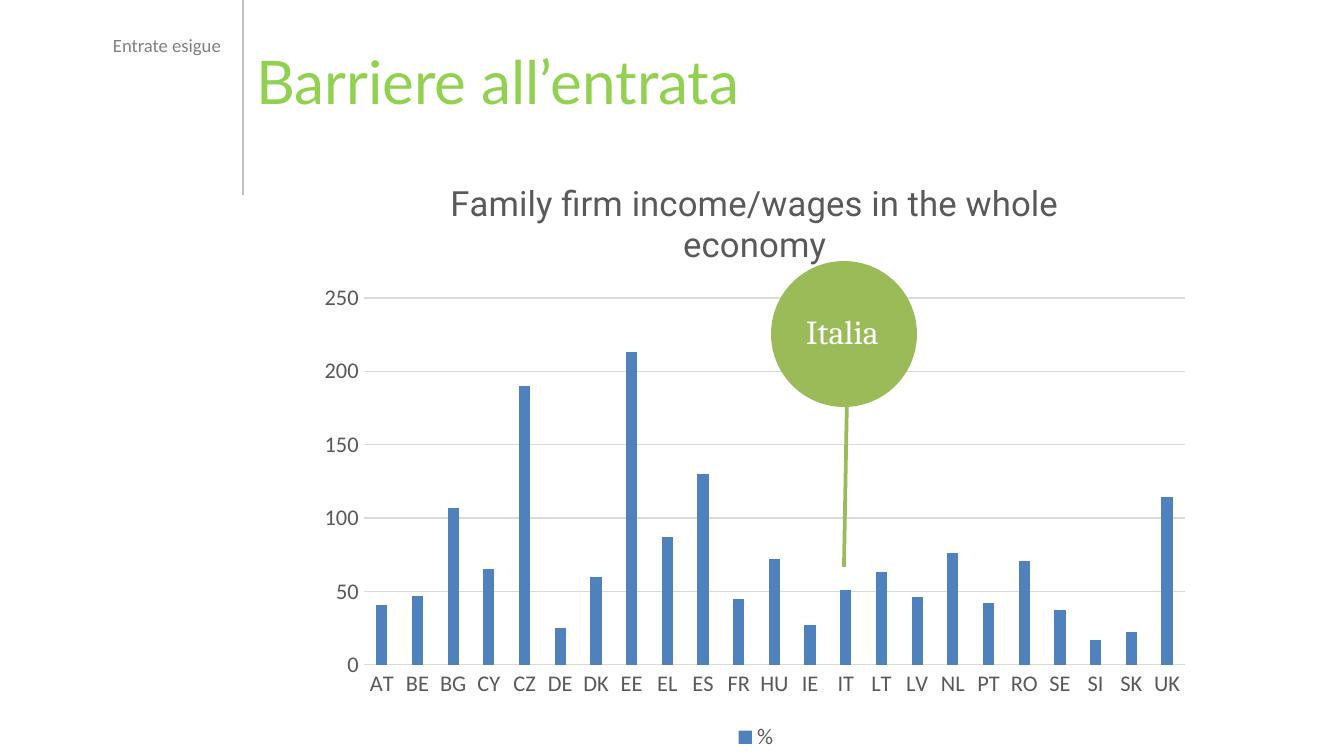
from lxml import etree
from pptx import Presentation
from pptx.chart.data import CategoryChartData
from pptx.dml.color import RGBColor
from pptx.enum.chart import XL_CHART_TYPE, XL_LEGEND_POSITION, XL_TICK_MARK
from pptx.enum.shapes import MSO_CONNECTOR, MSO_SHAPE
from pptx.enum.text import PP_ALIGN
from pptx.oxml import parse_xml
from pptx.oxml.ns import nsdecls, qn
from pptx.util import Pt

PX = 914400 / 134.4
COLUMN = XL_CHART_TYPE.COLUMN_CLUSTERED
BOTTOM = XL_LEGEND_POSITION.BOTTOM
NO_TICK = XL_TICK_MARK.NONE
STRAIGHT = MSO_CONNECTOR.STRAIGHT
OVAL = MSO_SHAPE.OVAL
LEFT, RIGHT = PP_ALIGN.LEFT, PP_ALIGN.RIGHT

COLORS = {
    "title": "92D050", "kicker": "808080", "rule": "BFBFBF",
    "text": "595959", "grid": "D9D9D9", "bar": "4F81BD",
    "callout": "9BBB59", "white": "FFFFFF",
}
INCOME = {
    "AT": 41, "BE": 47, "BG": 107, "CY": 65, "CZ": 190, "DE": 25,
    "DK": 60, "EE": 213, "EL": 87, "ES": 130, "FR": 45, "HU": 72,
    "IE": 27, "IT": 51, "LT": 63, "LV": 46, "NL": 76, "PT": 42,
    "RO": 71, "SE": 37, "SI": 17, "SK": 22, "UK": 114,
}


def px(*values):
    """Turn px lengths into EMU."""
    return [round(v * PX) for v in values]


def rgb(name):
    """Look up a named colour."""
    return RGBColor.from_string(COLORS[name])


def style_font(font, size, name, color):
    """Set size, typeface and colour of a font."""
    font.size, font.name, font.bold = Pt(size), name, False
    font.color.rgb = rgb(color)


def add_text(s, box, text, size, name, color, align=LEFT, wrap=True):
    """Add a one-paragraph text box."""
    tf = s.shapes.add_textbox(*px(*box)).text_frame
    tf.word_wrap = wrap
    p = tf.paragraphs[0]
    p.text, p.alignment = text, align
    style_font(p.runs[0].font, size, name, color)


def add_line(s, ends, color, width):
    """Add a straight line without a shadow."""
    c = s.shapes.add_connector(STRAIGHT, *px(*ends))
    c.line.color.rgb, c.line.width = rgb(color), Pt(width)
    etree.SubElement(c._element.spPr, qn("a:effectLst"))


def set_layout(parent, box, size, inner=False):
    """Place a chart part by a px box inside a chart of the given px size."""
    target = '<c:layoutTarget val="inner"/>' if inner else ""
    places = "".join(f'<c:{k} val="{v / full:.4f}"/>'
                     for k, v, full in zip("xywh", box, size * 2))
    layout = parse_xml(
        f'<c:layout {nsdecls("c")}><c:manualLayout>{target}'
        '<c:xMode val="edge"/><c:yMode val="edge"/>'
        f'{places}</c:manualLayout></c:layout>')
    for old in parent.findall(qn("c:layout")):
        parent.remove(old)
    tx = parent.find(qn("c:tx"))
    parent.insert(0 if tx is None else 1, layout)


def add_header(s, x, y, w, h):
    """Add the kicker, the vertical rule and the slide title."""
    rule = x + 243
    add_line(s, (rule, y, rule, y + h), "rule", 1)
    add_text(s, (rule, y + 38, x + w - rule, h - 38),
             "Barriere all’entrata", 32.2, "Lato", "title")
    add_text(s, (x + 20, y + 27, 214, 36),
             "Entrate esigue", 10, "Calibri", "kicker", RIGHT)


def add_income_chart(s, x, y, w, h):
    """Add the column chart of family firm income by country."""
    data = CategoryChartData()
    data.categories = list(INCOME)
    data.add_series("%", list(INCOME.values()))
    chart = s.shapes.add_chart(COLUMN, *px(x, y, w, h), data).chart
    style_font(chart.font, 12, "Calibri", "text")

    title = chart.chart_title
    title.text_frame.text = "Family firm income/wages in the whole economy"
    style_font(title.text_frame.paragraphs[0].runs[0].font, 18.6, "Roboto", "text")
    title.include_text_in_layout = False
    set_layout(title._element, (136, 15), (w, h))

    chart.has_legend = True
    chart.legend.position, chart.legend.include_in_layout = BOTTOM, False
    style_font(chart.legend.font, 12, "Calibri", "text")

    cat, val = chart.category_axis, chart.value_axis
    for axis in (cat, val):
        axis.major_tick_mark = axis.minor_tick_mark = NO_TICK
        style_font(axis.tick_labels.font, 12, "Calibri", "text")
    val.minimum_scale, val.maximum_scale, val.major_unit = 0, 250, 50
    val.format.line.fill.background()
    for line in (cat.format.line, val.major_gridlines.format.line):
        line.color.rgb, line.width = rgb("grid"), Pt(0.75)

    plot = chart.plots[0]
    plot.gap_width, plot.overlap, plot.vary_by_categories = 219, -27, False
    fill = plot.series[0].format.fill
    fill.solid()
    fill.fore_color.rgb = rgb("bar")
    set_layout(chart._chartSpace.chart.plotArea, (56, 139, 821, 367), (w, h), True)


def add_callout(s, x, y, w, h):
    """Add the round country label with its pointer."""
    sp = s.shapes.add_shape(OVAL, *px(x, y, w, w))
    sp.shadow.inherit = False
    sp.fill.solid()
    sp.fill.fore_color.rgb = rgb("callout")
    sp.line.fill.background()
    add_text(s, (x + 22, y + 43, 106, 54), "Italia", 18, "Cambria", "white", wrap=False)
    add_line(s, (x + 76, y + 136, x + 73, y + h), "callout", 2)


def main():
    """Build and save the slide."""
    prs = Presentation()
    prs.slide_width, prs.slide_height = px(1344, 756)
    s = prs.slides.add_slide(prs.slide_layouts[6])
    add_header(s, 0, 0, 1300, 195)
    add_income_chart(s, 308, 159, 896, 597)
    add_callout(s, 771, 261, 146, 306)
    prs.save("out.pptx")


if __name__ == "__main__":
    main()
